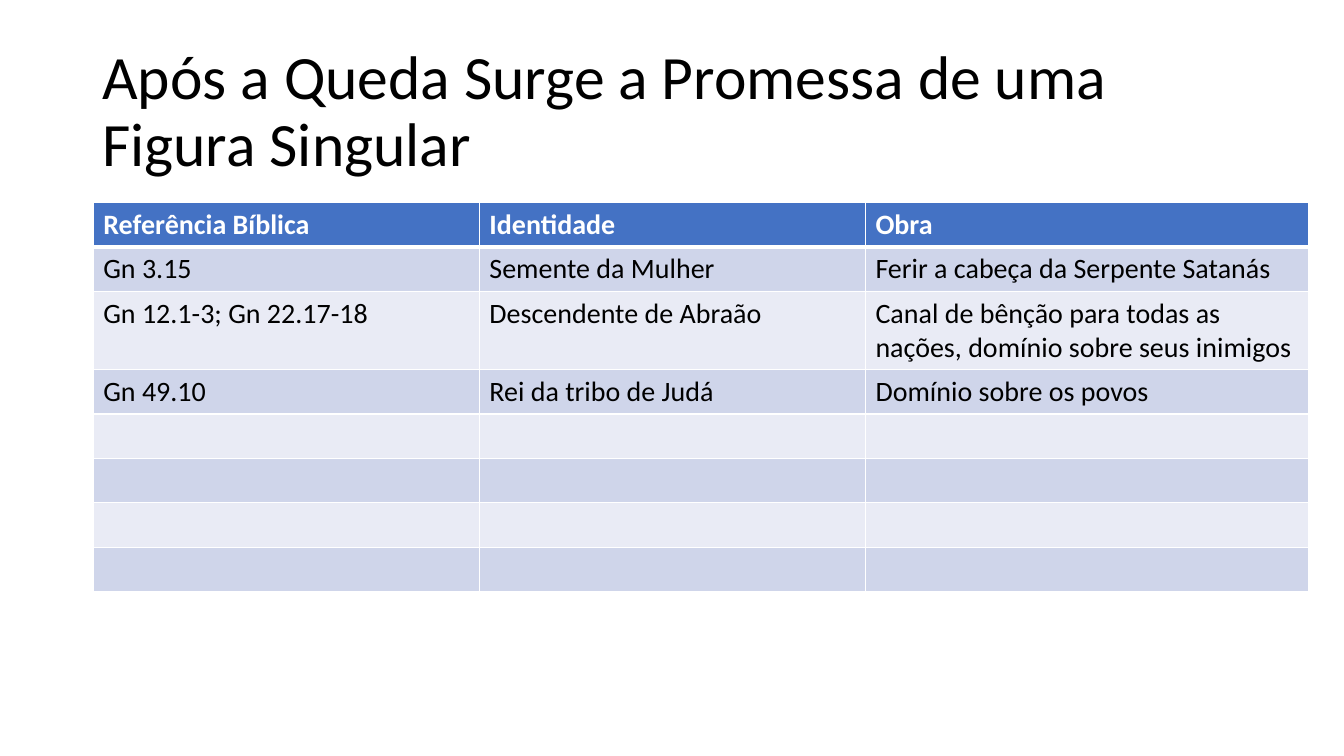
from dataclasses import dataclass

from lxml import etree
from pptx import Presentation, util as u
from pptx.dml.color import RGBColor
from pptx.enum import text as t
from pptx.oxml import ns


@dataclass(frozen=True)
class Theme:
    """Colours, font and type sizes of the deck."""
    font: str = "Calibri"
    title_size: int = 44
    table_size: int = 20
    ink: str = "000000"
    paper: str = "FFFFFF"
    header: str = "4472C4"
    bands: tuple = ("CFD5EA", "E9EBF5")
    rule: float = 1
    header_rule: float = 3


THEME = Theme()
TITLE = "Após a Queda Surge a Promessa de uma Figura Singular"
HEADINGS = ("Referência Bíblica", "Identidade", "Obra")
PROMISES = (
    ("Gn 3.15", "Semente da Mulher", "Ferir a cabeça da Serpente Satanás"),
    ("Gn 12.1-3; Gn 22.17-18", "Descendente de Abraão",
     "Canal de bênção para todas as nações, domínio sobre seus inimigos"),
    ("Gn 49.10", "Rei da tribo de Judá", "Domínio sobre os povos"),
)
EMPTY_ROWS = 4
COLUMN_WIDTHS = (9.73, 9.73, 11.18)
ROW_HEIGHT = 1.12
TALL_ROW, TALL_HEIGHT = 2, 1.97


def add_span(para, words, size, color, bold=False):
    """Add one formatted run to a paragraph."""
    span = para.add_run()
    span.text = words
    span.font.name = THEME.font
    span.font.size = u.Pt(size)
    span.font.bold = bold
    span.font.color.rgb = RGBColor.from_string(color)


def add_border(cell, side, width):
    """Draw a rule on one side of a cell."""
    line = etree.SubElement(cell._tc.get_or_add_tcPr(), ns.qn(f"a:ln{side}"),
                            w=str(u.Pt(width)))
    fill = etree.SubElement(line, ns.qn("a:solidFill"))
    etree.SubElement(fill, ns.qn("a:srgbClr"), val=THEME.paper)


def add_title(page, left, top, width, height):
    """Place the title, vertically centred in its box."""
    box = page.shapes.add_textbox(*map(u.Cm, (left, top, width, height)))
    frame = box.text_frame
    frame.word_wrap = True
    frame.vertical_anchor = t.MSO_ANCHOR.MIDDLE
    para = frame.paragraphs[0]
    para.line_spacing = 0.9
    add_span(para, TITLE, THEME.title_size, THEME.ink)


def fill_cell(cell, words, row):
    """Style one cell by its row and write its words."""
    is_header = row == 0
    for side in "LRTB":
        under_header = (row, side) in ((0, "B"), (1, "T"))
        add_border(cell, side, THEME.header_rule if under_header else THEME.rule)
    cell.fill.solid()
    fill = THEME.header if is_header else THEME.bands[(row - 1) % 2]
    cell.fill.fore_color.rgb = RGBColor.from_string(fill)
    if words:
        color = THEME.paper if is_header else THEME.ink
        add_span(cell.text_frame.paragraphs[0], words, THEME.table_size, color, is_header)


def add_promises(page, left, top):
    """Place the table of promises with its empty rows."""
    rows = (HEADINGS, *PROMISES, *[("",) * len(HEADINGS)] * EMPTY_ROWS)
    heights = [TALL_HEIGHT if row == TALL_ROW else ROW_HEIGHT for row in range(len(rows))]
    size = sum(COLUMN_WIDTHS), sum(heights)
    table = page.shapes.add_table(len(rows), len(HEADINGS),
                                  *map(u.Cm, (left, top, *size))).table
    for column, width in zip(table.columns, COLUMN_WIDTHS):
        column.width = u.Cm(width)
    for row, words in enumerate(rows):
        table.rows[row].height = u.Cm(heights[row])
        for column, word in enumerate(words):
            fill_cell(table.cell(row, column), word, row)


def main():
    """Build and save the deck."""
    deck = Presentation()
    deck.slide_width, deck.slide_height = u.Cm(33.87), u.Cm(19.05)
    page = deck.slides.add_slide(deck.slide_layouts[6])
    add_title(page, 2.33, 1.01, 29.21, 3.68)
    add_promises(page, 2.35, 5.1)
    deck.save("out.pptx")


if __name__ == "__main__":
    main()
